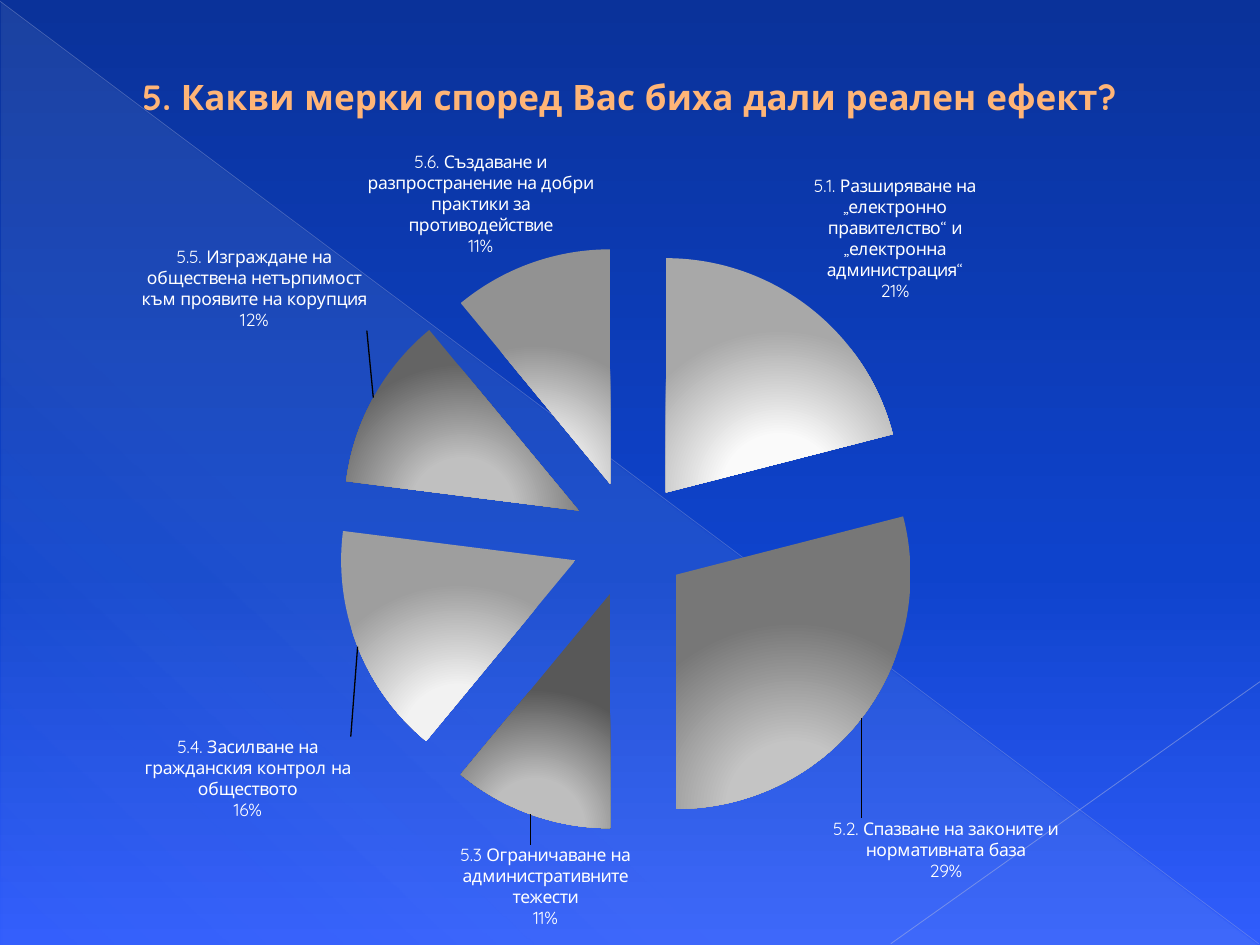
from lxml import etree
from pptx import Presentation
from pptx.chart.data import CategoryChartData
from pptx.dml.color import RGBColor
from pptx.enum.chart import XL_CHART_TYPE
from pptx.enum.shapes import MSO_CONNECTOR, MSO_SHAPE
from pptx.enum.text import MSO_ANCHOR
from pptx.oxml import parse_xml
from pptx.oxml.ns import nsdecls, qn
from pptx.util import Inches, Pt

PIE = XL_CHART_TYPE.PIE
RIGHT_TRIANGLE = MSO_SHAPE.RIGHT_TRIANGLE
STRAIGHT = MSO_CONNECTOR.STRAIGHT
MIDDLE = MSO_ANCHOR.MIDDLE
WIDTH, HEIGHT = 10, 7.5
FONT = "Quicksand"
LINEAR = '<a:lin {} ang="{}" scaled="0"/>'
RADIAL = '<a:path {} path="circle"><a:fillToRect l="50000" t="100000" r="50000" b="0"/></a:path>'


def set_gradient(gradient, stops, direction):
    """Replace a gradient's content; stops are (percent, colour, opacity percent)."""
    for child in list(gradient):
        gradient.remove(child)
    stop_list = etree.SubElement(gradient, qn("a:gsLst"))
    for position, color, opacity in stops:
        stop = etree.SubElement(stop_list, qn("a:gs"), pos=str(position * 1000))
        rgb = etree.SubElement(stop, qn("a:srgbClr"), val=color)
        if opacity < 100:
            etree.SubElement(rgb, qn("a:alpha"), val=str(opacity * 1000))
    gradient.append(parse_xml(direction))


def label_xml(index, position, dx=None, dy=None):
    """Label settings for one slice, or for the series when index is None."""
    head = "" if index is None else f'<c:idx val="{index}"/>'
    if dx is not None:
        head += f'<c:layout><c:manualLayout><c:x val="{dx}"/><c:y val="{dy}"/></c:manualLayout></c:layout>'
    return (head + '<c:numFmt formatCode="0%" sourceLinked="0"/><c:spPr><a:noFill/><a:ln><a:noFill/></a:ln></c:spPr>'
            f'<c:dLblPos val="{position}"/><c:showLegendKey val="0"/><c:showVal val="0"/>'
            '<c:showCatName val="1"/><c:showSerName val="0"/><c:showPercent val="1"/>'
            '<c:showBubbleSize val="0"/><c:separator>\n</c:separator>')


presentation = Presentation()
presentation.slide_width, presentation.slide_height = Inches(WIDTH), Inches(HEIGHT)
slide = presentation.slides.add_slide(presentation.slide_layouts[6])

# Background with a pale triangle and two thin diagonals
slide.background.fill.gradient()
set_gradient(next(slide.element.iter(qn("a:gradFill"))),
             [(0, "0A329A", 100), (60, "0E43CC", 100), (100, "315DFC", 100)],
             LINEAR.format(nsdecls("a"), 90 * 60000))

triangle = slide.shapes.add_shape(RIGHT_TRIANGLE, Inches(0.01), Inches(0.02), Inches(9.98), Inches(7.48))
triangle.shadow.inherit = False
triangle.line.fill.background()
triangle.fill.gradient()
set_gradient(next(triangle.element.iter(qn("a:gradFill"))),
             [(0, "CCDDEA", 10), (70, "CCDDEA", 8), (100, "CCDDEA", 1)],
             LINEAR.format(nsdecls("a"), 133 * 60000))

for x1, y1, x2, y2, color, weight, opacity in [
    (0, 0.01, 9.99, 7.49, "ADB6DC", 0.39, 35),
    (WIDTH, 5.41, 7.07, 7.49, "B7BEDF", 0.47, 45),
]:
    diagonal = slide.shapes.add_connector(STRAIGHT, Inches(x1), Inches(y1), Inches(x2), Inches(y2))
    diagonal.line.color.rgb = RGBColor.from_string(color)
    diagonal.line.width = Pt(weight)
    rgb = next(diagonal.element.iter(qn("a:srgbClr")))
    etree.SubElement(rgb, qn("a:alpha"), val=str(opacity * 1000))
    etree.SubElement(diagonal.element.spPr, qn("a:effectLst"))

# Title
title = slide.shapes.add_textbox(Inches(0.5), Inches(0.3), Inches(9), Inches(0.93))
title.text_frame.word_wrap = True
title.text_frame.vertical_anchor = MIDDLE
paragraph = title.text_frame.paragraphs[0]
paragraph._p.get_or_add_pPr().set("marL", str(Inches(0.53)))
run = paragraph.add_run()
run.text = "5. Какви мерки според Вас биха дали реален ефект?"
run.font.name, run.font.size, run.font.bold = FONT, Pt(20), True
run.font.color.rgb = RGBColor.from_string("FFB577")

# Measures: category, share, inner colour, outer colour
measures = [
    ("5.1. Разширяване на „електронно правителство“ и „електронна администрация“", 21, "FAFAFA", "A8A8A8"),
    ("5.2. Спазване на законите и нормативната база", 29, "C4C4C4", "777777"),
    ("5.3 Ограничаване на административните тежести", 11, "BEBEBE", "585858"),
    ("5.4. Засилване на гражданския контрол на обществото", 16, "F2F2F2", "9E9E9E"),
    ("5.5. Изграждане на обществена нетърпимост към проявите на корупция", 12, "C0C0C0", "646464"),
    ("5.6. Създаване и разпространение на добри практики за противодействие", 11, "EBEBEB", "929292"),
]
chart_data = CategoryChartData()
chart_data.categories = [measure[0] for measure in measures]
chart_data.add_series("Series 1", [measure[1] for measure in measures])
chart = slide.shapes.add_chart(PIE, Inches(0.5), Inches(1.07), Inches(9), Inches(6.3), chart_data).chart
chart.has_title = chart.has_legend = False
chart.font.name, chart.font.size = FONT, Pt(10)
chart.font.color.rgb = RGBColor.from_string("FFFFFF")
chart.plots[0].vary_by_categories = True
series = chart.plots[0].series[0]
for index, (_, _, inner, outer) in enumerate(measures):
    point = series.points[index]
    point.format.line.fill.background()
    point.format.fill.gradient()
    gradient = list(chart.element.iter(qn("a:gradFill")))[index]
    set_gradient(gradient, [(0, inner, 100), (35, inner, 100), (100, outer, 100)],
                 RADIAL.format(nsdecls("a")))

# Exploded slices, moved labels with leader lines, fixed plot area
series_element = next(chart.element.iter(qn("c:ser")))
series_element.find(qn("c:dPt")).addprevious(parse_xml(f'<c:explosion {nsdecls("c")} val="25"/>'))
moves = {1: (-0.03, 0.12), 2: (0.09, 0.03), 3: (0, 0.11), 4: (0, -0.08)}
moved_labels = "".join(f'<c:dLbl>{label_xml(index, "outEnd", dx, dy)}</c:dLbl>'
                       for index, (dx, dy) in moves.items())
series_element.find(qn("c:cat")).addprevious(parse_xml(
    f'<c:dLbls {nsdecls("c", "a")}>{moved_labels}{label_xml(None, "bestFit")}'
    '<c:showLeaderLines val="1"/><c:leaderLines><c:spPr><a:ln w="9525"><a:solidFill>'
    '<a:srgbClr val="000000"/></a:solidFill></a:ln></c:spPr></c:leaderLines></c:dLbls>'))

plot_area = next(chart.element.iter(qn("c:plotArea")))
for layout in plot_area.findall(qn("c:layout")):
    plot_area.remove(layout)
frame = "".join(f'<c:{side} val="{share}"/>' for side, share in
                [("layoutTarget", "inner"), ("xMode", "edge"), ("yMode", "edge"),
                 ("x", 0.124), ("y", 0.14), ("w", 0.752), ("h", 0.738)])
plot_area.insert(0, parse_xml(f'<c:layout {nsdecls("c")}><c:manualLayout>{frame}</c:manualLayout></c:layout>'))

presentation.save("out.pptx")
